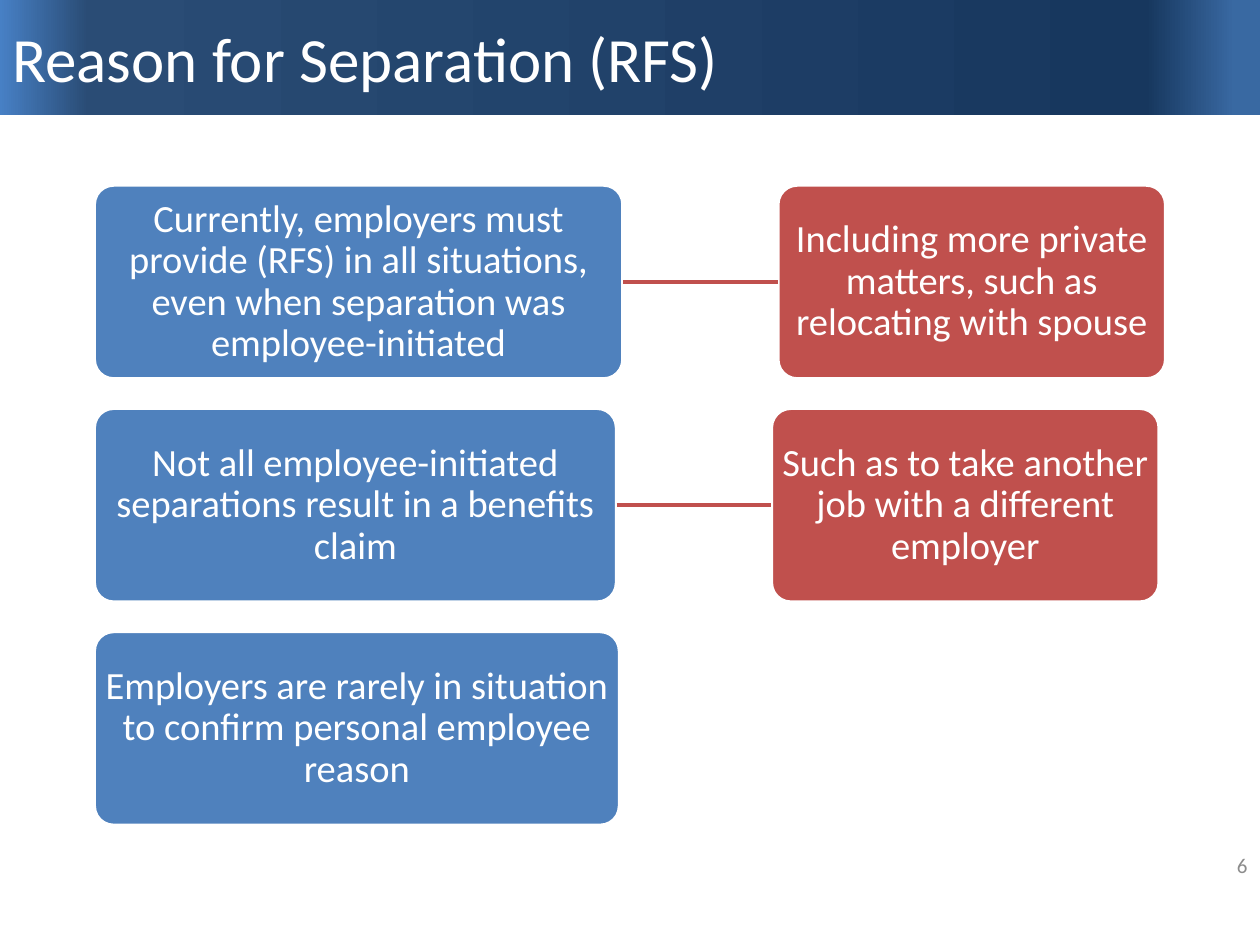
from lxml.etree import SubElement
from pptx import Presentation
from pptx.dml.color import RGBColor
from pptx.enum.shapes import MSO_CONNECTOR, MSO_SHAPE
from pptx.enum.text import MSO_ANCHOR, PP_ALIGN
from pptx.oxml.ns import qn
from pptx.util import Cm, Pt

WHITE, BLUE, RED, GRAY = "FFFFFF", "4F81BD", "C0504D", "8C8C8C"
BAND = [(2, "3969A2"), (9, "17375E"), (93, "2A4C75"), (100, "4780C5")]
LEFT, TOP, STEP = 1.9, 3.73, 4.5
HIGH, GAP, SIDE = 3.91, 3.12, 7.82
ROWS = [
    (10.66, "Currently, employers must provide (RFS) in all situations, "
            "even when separation was employee-initiated",
     "Including more private matters, such as relocating with spouse"),
    (10.53, "Not all employee-initiated separations result in a benefits claim",
     "Such as to take another job with a different employer"),
    (10.59, "Employers are rarely in situation to confirm personal employee reason",
     None),
]


def color(code):
    return RGBColor.from_string(code)


class Deck:
    font = "Calibri"

    def __init__(self, wide, high):
        self.prs = Presentation()
        self.prs.slide_width, self.prs.slide_height = Cm(wide), Cm(high)
        self.slide = self.prs.slides.add_slide(self.prs.slide_layouts[6])

    def set_text(self, shape, text, size, tint, align):
        frame = shape.text_frame
        frame.word_wrap = True
        frame.vertical_anchor = MSO_ANCHOR.MIDDLE
        frame.text = text
        para = frame.paragraphs[0]
        para.alignment = align
        for run in para.runs:
            run.font.name, run.font.size = self.font, Pt(size)
            run.font.color.rgb = color(tint)
        return frame

    def label(self, box, text, size, tint, align):
        shape = self.slide.shapes.add_textbox(*map(Cm, box))
        self.set_text(shape, text, size, tint, align)

    def band(self, box, stops):
        """Draw a bar whose gradient runs from right to left."""
        bar = self.slide.shapes.add_shape(MSO_SHAPE.RECTANGLE, *map(Cm, box))
        bar.shadow.inherit = False
        bar.line.fill.background()
        bar.fill.gradient()
        bar.fill.gradient_angle = 180
        items = bar._element.spPr.find(qn("a:gradFill")).find(qn("a:gsLst"))
        for old in list(items):
            items.remove(old)
        for part, code in stops:
            stop = SubElement(items, qn("a:gs"), pos=str(part * 1000))
            SubElement(stop, qn("a:srgbClr"), val=code)

    def card(self, box, text, tint):
        shape = self.slide.shapes.add_shape(
            MSO_SHAPE.ROUNDED_RECTANGLE, *map(Cm, box))
        shape.adjustments[0] = 0.1
        shape.shadow.inherit = False
        shape.fill.solid()
        shape.fill.fore_color.rgb = color(tint)
        shape.line.color.rgb = color(WHITE)
        shape.line.width = Pt(2)
        frame = self.set_text(shape, text, 22, WHITE, PP_ALIGN.CENTER)
        frame.margin_left = frame.margin_right = Cm(0.05)
        frame.margin_top = frame.margin_bottom = Cm(0.05)
        frame.paragraphs[0].line_spacing = 0.9
        return shape

    def link(self, start, end):
        """Join the right side of one card to the left side of another."""
        line = self.slide.shapes.add_connector(MSO_CONNECTOR.STRAIGHT, 0, 0, 0, 0)
        line.begin_connect(start, 3)
        line.end_connect(end, 1)
        line.line.color.rgb = color(RED)
        line.line.width = Pt(2)
        SubElement(line._element.spPr, qn("a:effectLst"))


def main():
    deck = Deck(25.4, 19.05)
    head = (0, 0, 25.4, 2.33)
    deck.band(head, BAND)
    deck.label(head, "Reason for Separation (RFS)", 36, WHITE, PP_ALIGN.LEFT)
    for row, (wide, point, note) in enumerate(ROWS):
        top = TOP + row * STEP
        main_card = deck.card((LEFT, top, wide, HIGH), point, BLUE)
        if note:
            box = (LEFT + wide + GAP, top, SIDE, HIGH)
            deck.link(main_card, deck.card(box, note, RED))
    deck.label((19.48, 16.94, 5.92, 1.02), "6", 12, GRAY, PP_ALIGN.RIGHT)
    deck.prs.save("out.pptx")


if __name__ == "__main__":
    main()
